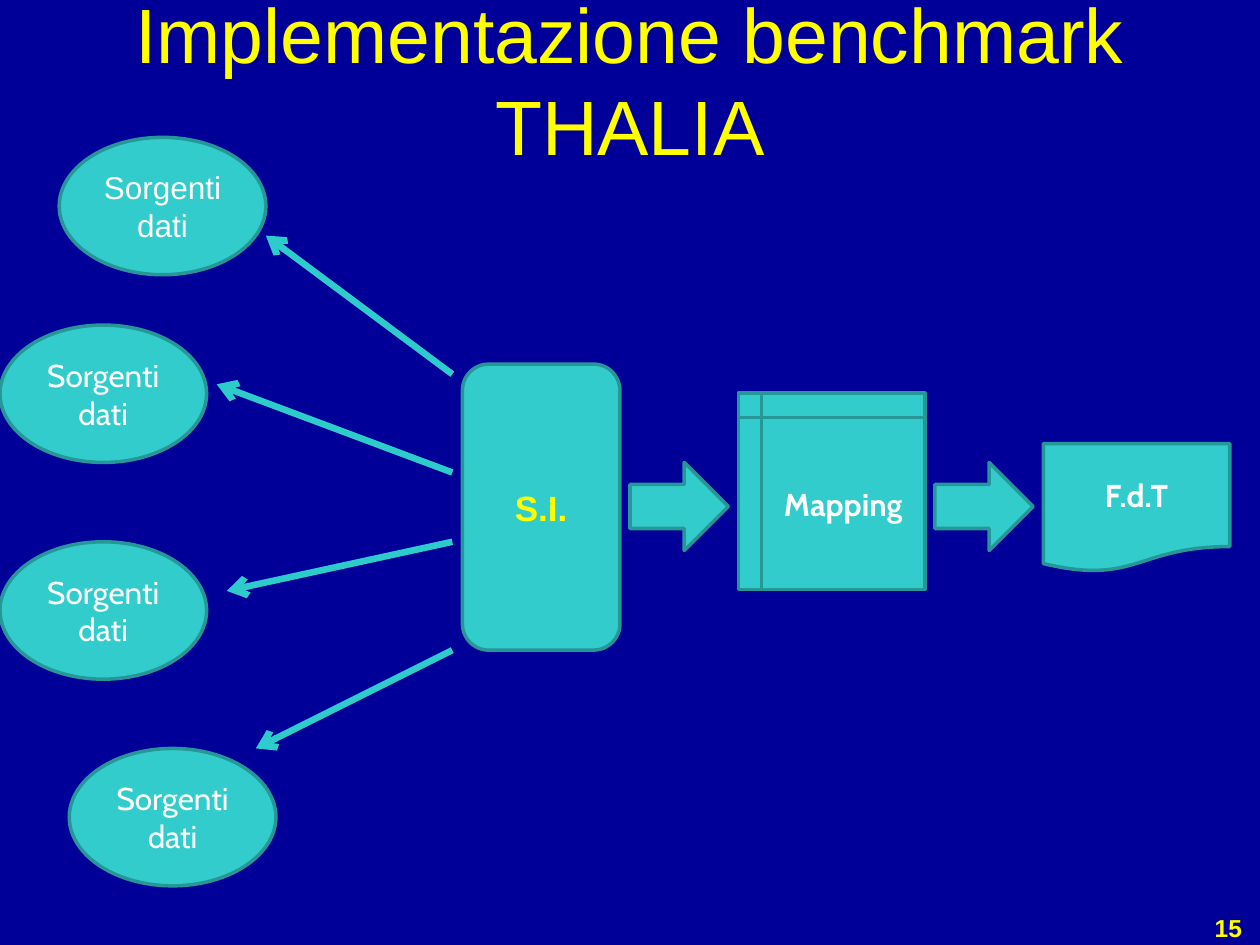
from lxml import etree
from pptx import Presentation
from pptx.dml.color import RGBColor
from pptx.enum import shapes, text
from pptx.oxml import ns
from pptx.util import Inches, Pt

NAVY = RGBColor(0x00, 0x00, 0x99)
YELLOW = RGBColor(0xFF, 0xFF, 0x00)
WHITE = RGBColor(0xFF, 0xFF, 0xFF)
TURQUOISE = RGBColor(0x33, 0xCC, 0xCC)
TEAL = RGBColor(0x26, 0x97, 0x97)
ARROW = RGBColor(0x2E, 0xCB, 0xCB)
KIND = shapes.MSO_SHAPE

prs = Presentation()
prs.slide_width, prs.slide_height = Inches(10), Inches(7.5)
slide = prs.slides.add_slide(prs.slide_layouts[6])
slide.background.fill.solid()
slide.background.fill.fore_color.rgb = NAVY


def write(box, words, size, color, font="Arial", bold=False, align=text.PP_ALIGN.CENTER):
    frame = box.text_frame
    frame.word_wrap = True
    frame.text = words
    for paragraph in frame.paragraphs:
        paragraph.alignment = align
        for run in paragraph.runs:
            run.font.name, run.font.size = font, Pt(size)
            run.font.bold, run.font.color.rgb = bold, color


def add_block(kind, left, top, width, height):
    block = slide.shapes.add_shape(kind, Inches(left), Inches(top), Inches(width), Inches(height))
    block.shadow.inherit = False
    block.fill.solid()
    block.fill.fore_color.rgb = TURQUOISE
    block.line.color.rgb = TEAL
    block.line.width = Pt(2)
    block.text_frame.vertical_anchor = text.MSO_ANCHOR.MIDDLE
    return block


# Title
title = slide.shapes.add_textbox(0, 0, Inches(10), Inches(1.25))
title.text_frame.vertical_anchor = text.MSO_ANCHOR.MIDDLE
write(title, "Implementazione benchmark THALIA", 44, YELLOW)

# Page number
page_number = slide.shapes.add_textbox(Inches(9.49), Inches(7.2), Inches(0.51), Inches(0.34))
page_number.text_frame.margin_left = Inches(0.15)
write(page_number, "15", 14, YELLOW, bold=True, align=text.PP_ALIGN.LEFT)

# Integration system
system = add_block(KIND.ROUNDED_RECTANGLE, 3.67, 2.89, 1.25, 2.27)
write(system, "S.I.", 20, YELLOW, bold=True)

# Arrows from the system to its sources
for start_y, end_x, end_y in [(2.97, 2.11, 1.87), (3.75, 1.72, 3.05),
                              (4.3, 1.8, 4.69), (5.16, 2.03, 5.94)]:
    link = slide.shapes.add_connector(shapes.MSO_CONNECTOR.STRAIGHT, Inches(3.59),
                                      Inches(start_y), Inches(end_x), Inches(end_y))
    link.line.color.rgb = ARROW
    link.line.width = Pt(3.75)
    etree.SubElement(link.line._get_or_add_ln(), ns.qn("a:tailEnd"), type="arrow")
    etree.SubElement(link._element.spPr, ns.qn("a:effectLst"))

# Data sources
for left, top, font in [(0.47, 1.09, "Arial"), (0, 2.58, "Cabin"),
                        (0, 4.3, "Cabin"), (0.55, 5.94, "Cabin")]:
    source = add_block(KIND.OVAL, left, top, 1.64, 1.09)
    write(source, "Sorgenti\ndati", 18, WHITE, font)

# Mapping and final document, each preceded by a block arrow
for arrow_left, kind, top, height, label in [
        (5, KIND.FLOWCHART_INTERNAL_STORAGE, 3.12, 1.56, "Mapping"),
        (7.42, KIND.FLOWCHART_DOCUMENT, 3.52, 1.02, "F.d.T")]:
    add_block(KIND.RIGHT_ARROW, arrow_left, 3.67, 0.78, 0.7)
    step = add_block(kind, arrow_left + 0.86, top, 1.48, height)
    write(step, label, 18, WHITE, "Cabin", bold=True)

prs.save("out.pptx")
